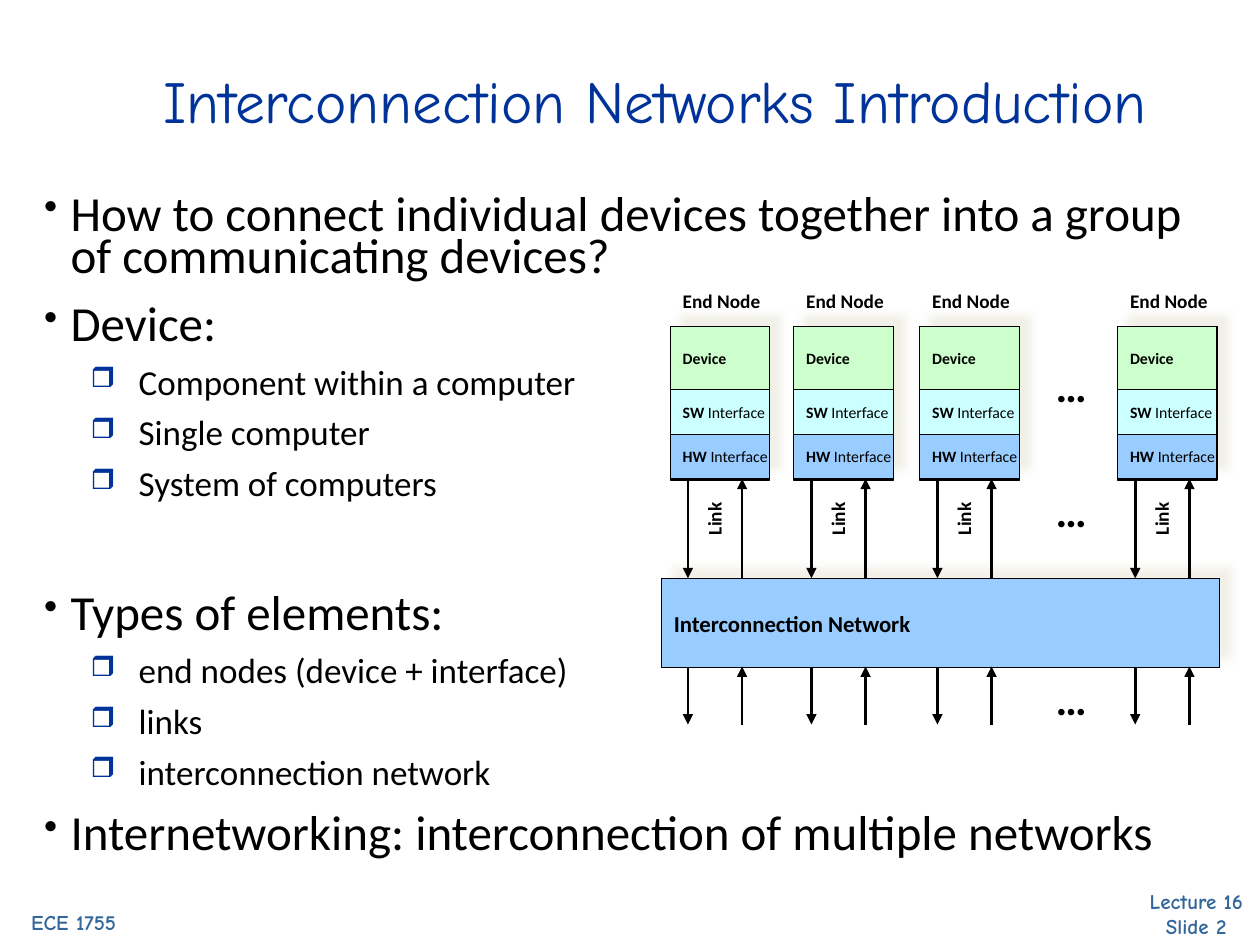
import pptx
import pptx.dml.color
import pptx.enum.shapes
import pptx.enum.text
import pptx.oxml.ns
import pptx.util
from lxml import etree

Inches, Pt = pptx.util.Inches, pptx.util.Pt
RGBColor = pptx.dml.color.RGBColor
PP_ALIGN = pptx.enum.text.PP_ALIGN
ANCHOR = pptx.enum.text.MSO_ANCHOR
AUTO_SIZE = pptx.enum.text.MSO_AUTO_SIZE
qn = pptx.oxml.ns.qn

# Content
TITLE = "Interconnection Networks Introduction"
BODY = [  # level, text, space before in points
    (0, "How to connect individual devices together into a group of communicating devices?", 15),
    (0, "Device:", 15),
    (1, "Component within a computer", 7),
    (1, "Single computer", 7),
    (1, "System of computers", 7),
    (0, "Types of elements:", 54),
    (1, "end nodes (device + interface)", 7),
    (1, "links", 7),
    (1, "interconnection network", 7),
    (0, "Internetworking: interconnection of multiple networks", 15),
]
FOOTERS = [  # lines, box
    (["Lecture 16", "Slide 2"], (8.83, 7, 1.33, 0.5)),
    (["ECE 1755"], (-0.08, 7.17, 1.33, 0.3)),
]

# Style
BLACK = RGBColor(0x00, 0x00, 0x00)
NAVY = RGBColor(0x00, 0x33, 0x99)
STEEL = RGBColor(0x33, 0x66, 0x99)
BLUE = RGBColor(0x99, 0xCC, 0xFF)
CYAN = RGBColor(0xCC, 0xFF, 0xFF)
GREEN = RGBColor(0xCC, 0xFF, 0xCC)
SHADOW = RGBColor(0xEE, 0xEC, 0xE1)
SANS, COMIC = "Calibri", "Comic Neue"
LEVELS = [  # font size, line spacing, margin, hanging indent, bullet, bullet colour
    (28, 24, 0.21, -0.21, "•", BLACK),
    (20, 22, 0.75, -0.38, "❒", NAVY),
]

# Diagram geometry
NODE_LEFTS = [5.32, 6.3, 7.3, 8.87]
NODE_TOP, NODE_WIDTH, NODE_HEIGHT = 2.59, 0.79, 1.22
LAYERS = [  # bold text, plain text, top, height, fill
    ("HW ", "Interface", 3.44, 0.36, BLUE),
    ("SW ", "Interface", 3.09, 0.36, CYAN),
    ("Device", "", NODE_TOP, 0.5, GREEN),
]
NETWORK_BOX = (5.25, 4.59, 4.43, 0.71)
DOWN_OFFSET, UP_OFFSET = 0.14, 0.57
ARROW_SPANS = [(3.8, 4.59), (5.29, 5.75)]
ELLIPSIS_TOPS = [2.8, 3.79, 5.28]


def add_child(parent, tag, **attributes):
    child = etree.SubElement(parent, qn(tag))
    for name, value in attributes.items():
        child.set(name, str(value))
    return child


def add_run(paragraph, text, size, color=BLACK, font=SANS, bold=False):
    run = paragraph.add_run()
    run.text = text
    run.font.size, run.font.name, run.font.bold = Pt(size), font, bold
    run.font.color.rgb = color


def set_frame(frame, insets=(0.1, 0.05), wrap=False, anchor=ANCHOR.TOP, grow=False):
    frame.margin_left = frame.margin_right = Inches(insets[0])
    frame.margin_top = frame.margin_bottom = Inches(insets[1])
    frame.word_wrap, frame.vertical_anchor = wrap, anchor
    frame.auto_size = AUTO_SIZE.SHAPE_TO_FIT_TEXT if grow else AUTO_SIZE.NONE


def add_label(slide, text, box, size, rotation=0):
    label = slide.shapes.add_textbox(*map(Inches, box))
    label.rotation = rotation
    set_frame(label.text_frame, grow=True)
    add_run(label.text_frame.paragraphs[0], text, size, bold=True)


def add_box(slide, box, fill, runs=(), size=9, shadow=False):
    shape = slide.shapes.add_shape(pptx.enum.shapes.MSO_SHAPE.RECTANGLE, *map(Inches, box))
    shape.shadow.inherit = False
    shape.fill.solid()
    shape.fill.fore_color.rgb = fill
    shape.line.color.rgb, shape.line.width = BLACK, Pt(0.75)
    if shadow:
        effects = shape._element.spPr.find(qn("a:effectLst"))
        outer = add_child(effects, "a:outerShdw", blurRad=Pt(5), dist=Pt(8.5),
                          dir=315 * 60000, algn="ctr", rotWithShape=0)
        color = add_child(outer, "a:srgbClr", val=SHADOW)
        add_child(color, "a:alpha", val=75000)
    set_frame(shape.text_frame, anchor=ANCHOR.MIDDLE)
    paragraph = shape.text_frame.paragraphs[0]
    paragraph.alignment = PP_ALIGN.LEFT
    for text, bold in runs:
        add_run(paragraph, text, size, bold=bold)


def add_arrow(slide, x, start, end):
    arrow = slide.shapes.add_connector(
        pptx.enum.shapes.MSO_CONNECTOR.STRAIGHT, *map(Inches, (x, start, x, end)))
    arrow.line.color.rgb, arrow.line.width = BLACK, Pt(1.5)
    add_child(arrow.line._get_or_add_ln(), "a:tailEnd", type="triangle")
    add_child(arrow._element.spPr, "a:effectLst")


def add_body(slide):
    body = slide.shapes.add_textbox(*map(Inches, (0.35, 1.58, 9.18, 5.3)))
    frame = body.text_frame
    set_frame(frame, insets=(0, 0), wrap=True)
    for index, (level, text, space_before) in enumerate(BODY):
        size, spacing, margin, indent, bullet, bullet_color = LEVELS[level]
        paragraph = frame.add_paragraph() if index else frame.paragraphs[0]
        paragraph.level = level
        paragraph.line_spacing, paragraph.space_before = Pt(spacing), Pt(space_before)
        properties = paragraph._p.get_or_add_pPr()
        properties.set("marL", str(Inches(margin)))
        properties.set("indent", str(Inches(indent)))
        add_child(add_child(properties, "a:buClr"), "a:srgbClr", val=bullet_color)
        add_child(properties, "a:buSzPct", val=80000)
        add_child(properties, "a:buChar", char=bullet)
        add_run(paragraph, text, size)


def add_diagram(slide):
    # Network and end nodes
    add_box(slide, NETWORK_BOX, BLUE, [("Interconnection Network", True)], 13, shadow=True)
    for left in NODE_LEFTS:
        add_label(slide, "End Node", (left, 2.25, 0.82, 0.29), 11)
        add_box(slide, (left, NODE_TOP, NODE_WIDTH, NODE_HEIGHT), GREEN, shadow=True)

    # Links above and below the network
    for left in NODE_LEFTS:
        for top, bottom in ARROW_SPANS:
            add_arrow(slide, left + DOWN_OFFSET, top, bottom)
            add_arrow(slide, left + UP_OFFSET, bottom, top)
        add_label(slide, "Link", (left + 0.12, 3.97, 0.46, 0.29), 11, rotation=270)
    for top in ELLIPSIS_TOPS:
        add_label(slide, "…", (8.28, top, 0.45, 0.52), 25)

    # Layers inside each node
    for bold_text, plain_text, top, height, fill in LAYERS:
        runs = [(text, bold) for text, bold in ((bold_text, True), (plain_text, False)) if text]
        for left in NODE_LEFTS:
            add_box(slide, (left, top, NODE_WIDTH, height), fill, runs)


def main():
    presentation = pptx.Presentation()
    presentation.slide_width, presentation.slide_height = Inches(10), Inches(7.5)
    slide = presentation.slides.add_slide(presentation.slide_layouts[5])

    # Title
    title = slide.shapes.title
    title.left, title.top, title.width, title.height = map(Inches, (0.73, 0.51, 8.94, 0.57))
    set_frame(title.text_frame, insets=(0, 0), wrap=True, anchor=ANCHOR.MIDDLE, grow=True)
    title.text_frame.paragraphs[0].alignment = PP_ALIGN.CENTER
    add_run(title.text_frame.paragraphs[0], TITLE, 34, NAVY, COMIC)

    # Footers
    for lines, box in FOOTERS:
        footer = slide.shapes.add_textbox(*map(Inches, box))
        set_frame(footer.text_frame, wrap=True, grow=True)
        paragraph = footer.text_frame.paragraphs[0]
        paragraph.alignment = PP_ALIGN.CENTER
        for index, line in enumerate(lines):
            if index:
                paragraph.add_line_break()
            add_run(paragraph, line, 12, STEEL, COMIC, bold=True)

    add_body(slide)
    add_diagram(slide)
    presentation.save("out.pptx")


if __name__ == "__main__":
    main()
